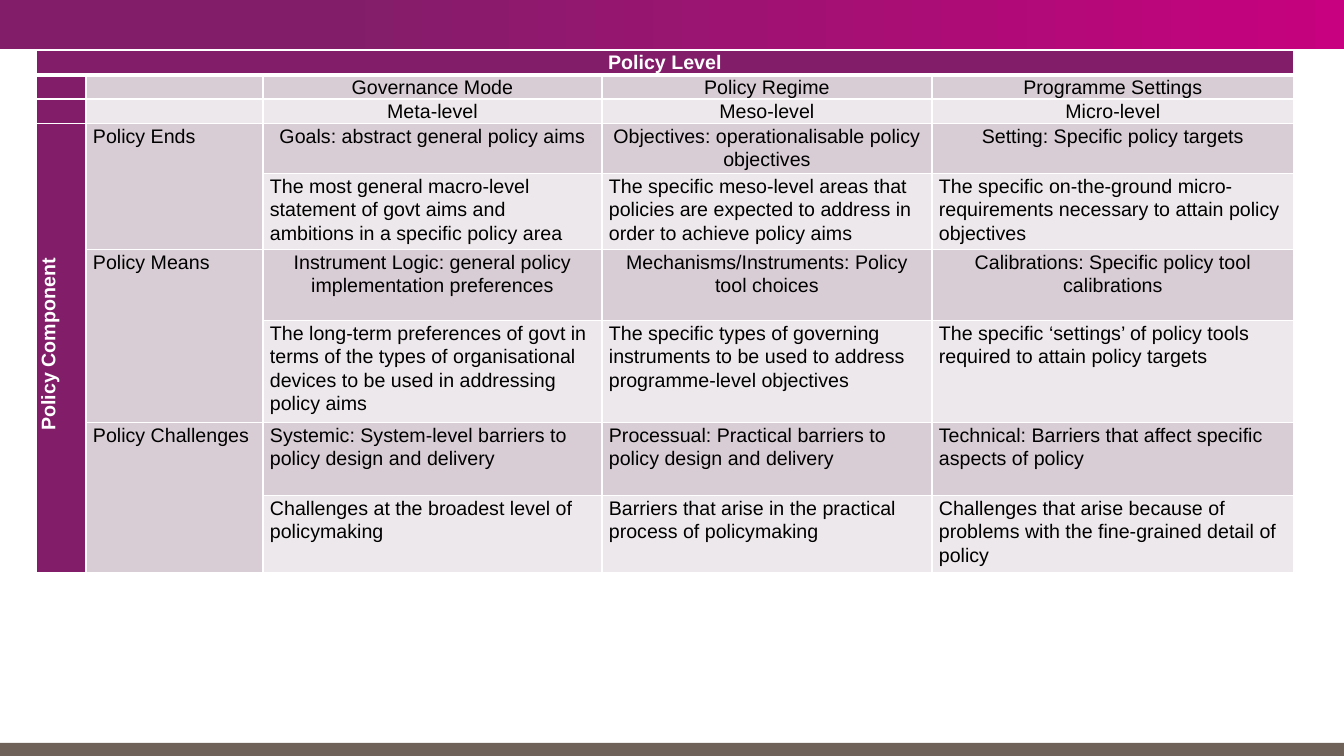
from dataclasses import dataclass

from lxml import etree
from pptx import Presentation
from pptx import util as u
from pptx.dml.color import RGBColor
from pptx.enum import shapes, text
from pptx.oxml.ns import qn


@dataclass(frozen=True)
class Theme:
    plum: str = "821D69"
    band_start: str = "C7017F"
    band_end: str = "821E69"
    taupe: str = "6F6258"
    dark_tint: str = "D8CDD4"
    light_tint: str = "EDE8EB"
    ink: str = "000000"
    white: str = "FFFFFF"
    font: str = "Arial"
    size: int = 14
    thin: int = 1
    thick: int = 3


THEME = Theme()
PAGE = (0, 0, 1344, 756)
COLUMNS = [50, 177, 339, 330, 362]
ROWS = [25, 24, 25, 50, 76, 71, 102, 73, 77]
LEVELS = [
    ["Governance Mode", "Policy Regime", "Programme Settings"],
    ["Meta-level", "Meso-level", "Micro-level"],
]
COMPONENTS = [
    ("Policy Ends", True, [
        ["Goals: abstract general policy aims",
         "Objectives: operationalisable policy objectives",
         "Setting: Specific policy targets"],
        ["The most general macro-level statement of govt aims and ambitions in a specific policy area",
         "The specific meso-level areas that policies are expected to address in order to achieve policy aims",
         "The specific on-the-ground micro-requirements necessary to attain policy objectives"],
    ]),
    ("Policy Means", True, [
        ["Instrument Logic: general policy implementation preferences",
         "Mechanisms/Instruments: Policy tool choices",
         "Calibrations: Specific policy tool calibrations"],
        ["The long-term preferences of govt in terms of the types of organisational devices "
         "to be used in addressing policy aims",
         "The specific types of governing instruments to be used to address programme-level objectives",
         "The specific ‘settings’ of policy tools required to attain policy targets"],
    ]),
    ("Policy Challenges", False, [
        ["Systemic: System-level barriers to policy design and delivery",
         "Processual: Practical barriers to policy design and delivery",
         "Technical: Barriers that affect specific aspects of policy"],
        ["Challenges at the broadest level of policymaking",
         "Barriers that arise in the practical process of policymaking",
         "Challenges that arise because of problems with the fine-grained detail of policy"],
    ]),
]


def px(length):
    return u.Emu(round(length * 914400 / 100.8))


def rgb(colour):
    return RGBColor.from_string(colour)


def write(cell, words, color=THEME.ink, bold=False, centred=False):
    para = cell.text_frame.paragraphs[0]
    para.alignment = text.PP_ALIGN.CENTER if centred else text.PP_ALIGN.LEFT
    para.line_spacing = 1.07
    para.space_after = u.Pt(8)
    span = para.add_run()
    span.text = words
    span.font.name = THEME.font
    span.font.size = u.Pt(THEME.size)
    span.font.bold = bold
    span.font.color.rgb = rgb(color)


def add_border(cell, side, width):
    line = etree.SubElement(cell._tc.get_or_add_tcPr(), qn(f"a:ln{side}"), w=str(u.Pt(width)))
    fill = etree.SubElement(line, qn("a:solidFill"))
    etree.SubElement(fill, qn("a:srgbClr"), val=THEME.white)


def style_cell(cell, row, column):
    cell.margin_left = cell.margin_right = px(7)
    cell.margin_top = cell.margin_bottom = 0
    for side in "LRTB":
        under_title = (row, side) in [(0, "B"), (1, "T")]
        add_border(cell, side, THEME.thick if under_title else THEME.thin)
    if row == 0 or column == 0:
        colour = THEME.plum
    elif row % 2 or (column == 1 and row > 2):
        colour = THEME.dark_tint
    else:
        colour = THEME.light_tint
    cell.fill.solid()
    cell.fill.fore_color.rgb = rgb(colour)
    end = cell.text_frame.paragraphs[0]._p.get_or_add_endParaRPr()
    end.set("sz", str(THEME.size * 100))


def add_policy_table(page, box):
    left, top, width, height = map(px, box)
    frame = page.shapes.add_table(len(ROWS), len(COLUMNS), left, top, width, height)
    table = frame.table
    table.first_row = table.horz_banding = False
    for column, length in zip(table.columns, COLUMNS):
        column.width = px(length)
    for row, length in zip(table.rows, ROWS):
        row.height = px(length)
    for row in range(len(ROWS)):
        for column in range(len(COLUMNS)):
            style_cell(table.cell(row, column), row, column)

    title = table.cell(0, 0)
    title.merge(table.cell(0, 4))
    write(title, "Policy Level", color=THEME.white, bold=True, centred=True)

    side = table.cell(3, 0)
    side.merge(table.cell(8, 0))
    side.vertical_anchor = text.MSO_ANCHOR.MIDDLE
    side._tc.get_or_add_tcPr().set("vert", "vert270")
    write(side, "Policy Component", color=THEME.white, bold=True, centred=True)
    side.text_frame.paragraphs[0]._p.get_or_add_pPr().set("marL", str(px(8)))

    for row, names in enumerate(LEVELS, 1):
        for column, name in enumerate(names, 2):
            write(table.cell(row, column), name, centred=True)

    for index, (name, centred, entries) in enumerate(COMPONENTS):
        first = 3 + 2 * index
        label = table.cell(first, 1)
        label.merge(table.cell(first + 1, 1))
        write(label, name)
        for offset, words in enumerate(entries):
            for column, entry in enumerate(words, 2):
                write(table.cell(first + offset, column), entry, centred=centred and offset == 0)


def add_band(page, box):
    band = page.shapes.add_shape(shapes.MSO_SHAPE.RECTANGLE, *map(px, box))
    band.shadow.inherit = False
    band.line.fill.background()
    return band


def add_header(page, box):
    fill = add_band(page, box).fill
    fill.gradient()
    fill.gradient_angle = 180
    stops = [(0, THEME.band_start), (0.75, THEME.band_end)]
    for stop, (position, colour) in zip(fill.gradient_stops, stops):
        stop.position = position
        stop.color.rgb = rgb(colour)


def add_footer(page, box):
    fill = add_band(page, box).fill
    fill.solid()
    fill.fore_color.rgb = rgb(THEME.taupe)


def add_policy_page(deck, box):
    left, top, width, height = box
    page = deck.slides.add_slide(deck.slide_layouts[6])
    add_header(page, (left, top, width, 49))
    add_footer(page, (left, top + height - 13, width, 13))
    add_policy_table(page, (left + 36, top + 50, sum(COLUMNS), sum(ROWS)))


def main():
    deck = Presentation()
    deck.slide_width, deck.slide_height = px(PAGE[2]), px(PAGE[3])
    add_policy_page(deck, PAGE)
    deck.save("out.pptx")


if __name__ == "__main__":
    main()
